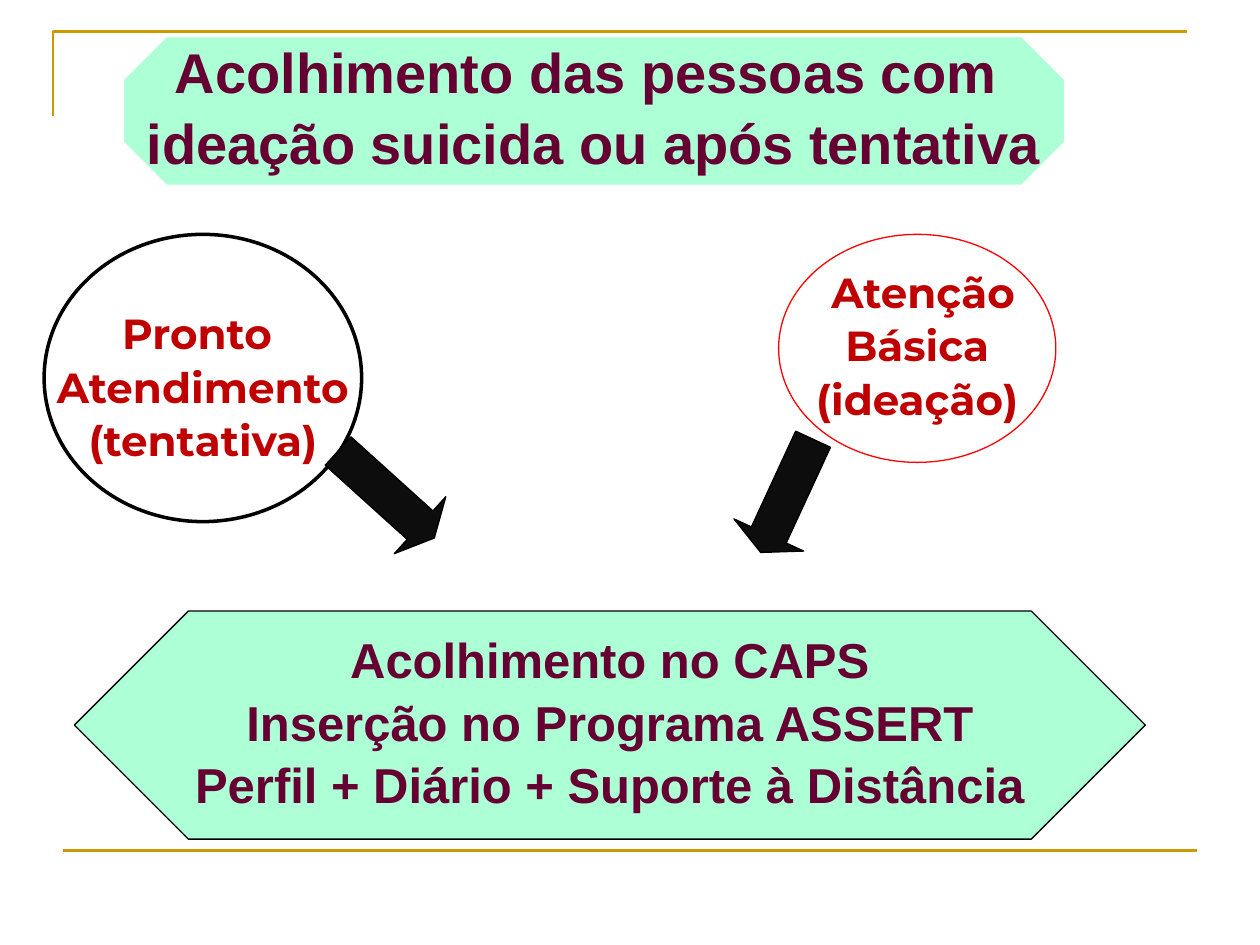
import pptx
import pptx.dml.color
import pptx.enum.shapes
import pptx.enum.text
import pptx.oxml
import pptx.oxml.ns
import pptx.util

Inches = pptx.util.Inches
Pt = pptx.util.Pt
RGBColor = pptx.dml.color.RGBColor
Shape = pptx.enum.shapes.MSO_SHAPE

GOLD = RGBColor(0xCC, 0x99, 0x00)
MINT = RGBColor(0xAD, 0xFF, 0xD6)
PLUM = RGBColor(0x66, 0x00, 0x33)
DARK_RED = RGBColor(0xC0, 0x00, 0x00)
RED = RGBColor(0xFF, 0x00, 0x00)
WHITE = RGBColor(0xFF, 0xFF, 0xFF)
BLACK = RGBColor(0x00, 0x00, 0x00)
CHARCOAL = RGBColor(0x0D, 0x0D, 0x0D)


def draw_frame(slide, left, top, width, height):
    corner_drop = 0.67
    builder = slide.shapes.build_freeform(Inches(left), Inches(top + corner_drop))
    builder.add_line_segments(
        [(Inches(left), Inches(top)), (Inches(left + width), Inches(top))], close=False
    )
    corner = builder.convert_to_shape()
    corner.shadow.inherit = False
    corner.fill.background()

    base_left, base_top = left + 0.08, top + height
    baseline = slide.shapes.add_connector(
        pptx.enum.shapes.MSO_CONNECTOR.STRAIGHT,
        Inches(base_left), Inches(base_top), Inches(base_left + width), Inches(base_top),
    )
    baseline._element.spPr.append(
        pptx.oxml.parse_xml(f'<a:effectLst {pptx.oxml.ns.nsdecls("a")}/>')
    )
    for rule in (corner, baseline):
        rule.line.color.rgb = GOLD
        rule.line.width = Pt(1.5)


def draw_shape(slide, preset, box, fill, outline, weight=0.75):
    figure = slide.shapes.add_shape(preset, *map(Inches, box))
    figure.shadow.inherit = False
    figure.fill.solid()
    figure.fill.fore_color.rgb = fill
    figure.line.color.rgb = outline
    figure.line.width = Pt(weight)
    return figure


def write_lines(figure, lines, size, font, color):
    frame = figure.text_frame
    frame.word_wrap = False
    frame.vertical_anchor = pptx.enum.text.MSO_ANCHOR.MIDDLE
    frame.text = "\n".join(lines)
    for paragraph in frame.paragraphs:
        paragraph.alignment = pptx.enum.text.PP_ALIGN.CENTER
        paragraph.line_spacing = 0.9
        paragraph.space_before = Pt(size * 0.2)
        for run in paragraph.runs:
            run.font.size = Pt(size)
            run.font.name = font
            run.font.bold = True
            run.font.color.rgb = color


def draw_banner(slide, box, cut, outline, lines, size):
    banner = draw_shape(slide, Shape.OCTAGON, box, MINT, outline)
    banner.adjustments[0] = cut
    write_lines(banner, lines, size, "Arial", PLUM)


def draw_entry_point(slide, box, outline, weight, lines, top_inset=0.05):
    entry = draw_shape(slide, Shape.OVAL, box, WHITE, outline, weight)
    entry.text_frame.margin_top = Inches(top_inset)
    write_lines(entry, lines, 24, "Montserrat", DARK_RED)


def draw_arrow(slide, box, angle):
    arrow = draw_shape(slide, Shape.RIGHT_ARROW, box, CHARCOAL, BLACK)
    arrow.adjustments[0] = 0.5
    arrow.adjustments[1] = 0.25
    arrow.rotation = angle


def main():
    deck = pptx.Presentation()
    deck.slide_width = Inches(10)
    deck.slide_height = Inches(7.5)
    slide = deck.slides.add_slide(deck.slide_layouts[6])

    draw_frame(slide, 0.42, 0.25, 9, 6.5)
    draw_banner(
        slide, (0.98, 0.29, 7.47, 1.18), 0.29, WHITE,
        ["Acolhimento das pessoas com ", "ideação suicida ou após tentativa"], 32,
    )
    draw_entry_point(
        slide, (0.35, 1.86, 2.52, 2.28), BLACK, 2,
        ["Pronto ", "Atendimento", "(tentativa)"], top_inset=0.23,
    )
    draw_banner(
        slide, (0.59, 4.85, 8.5, 1.81), 0.5, BLACK,
        [
            "Acolhimento no CAPS",
            "Inserção no Programa ASSERT",
            "Perfil + Diário + Suporte à Distância",
        ],
        28,
    )
    draw_entry_point(
        slide, (6.18, 1.86, 2.2, 1.81), RED, 0.75, [" Atenção", "Básica", "(ideação)"]
    )
    draw_arrow(slide, (2.55, 3.62, 1.03, 0.61), 42.1)
    draw_arrow(slide, (5.75, 3.63, 0.99, 0.61), 114.8)

    deck.save("out.pptx")


if __name__ == "__main__":
    main()
